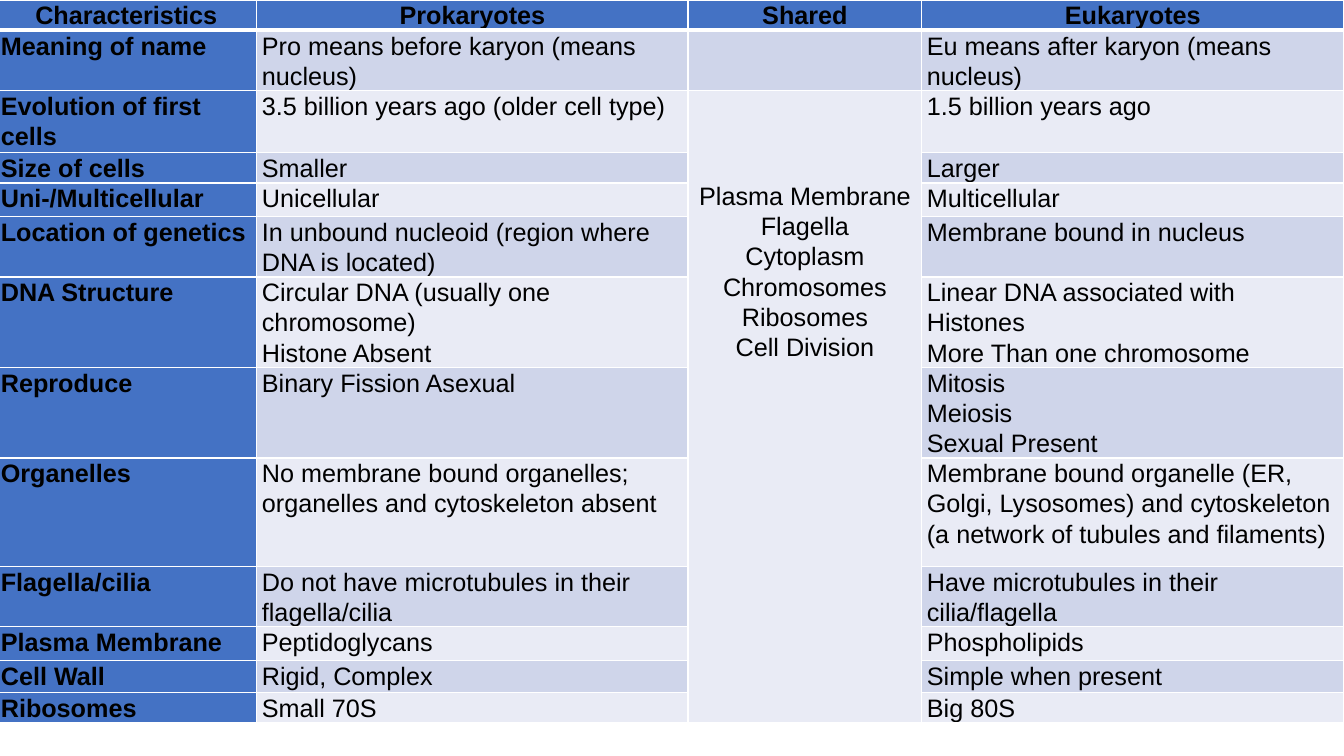
from lxml import etree
from pptx import Presentation
from pptx.dml.color import RGBColor
from pptx.enum.text import PP_ALIGN
from pptx.oxml.ns import qn
from pptx.util import Pt

LEFT, CENTER = PP_ALIGN.LEFT, PP_ALIGN.CENTER
BLUE, DARK_BAND, LIGHT_BAND = "4472C4", "CFD5EA", "E9EBF5"
WHITE, BLACK = "FFFFFF", "000000"

COLUMN_WIDTHS = [186.5, 308, 167, 301.5]
ROW_HEIGHTS = [15, 42, 44.5, 21, 24, 43, 62, 42, 77.5, 42, 24, 23, 21]
SHARED_COLUMN, SHARED_ROW = 2, 2
SHARED_TOP = 64.5  # three lines of text

HEADINGS = ["Characteristics", "Prokaryotes", "Shared", "Eukaryotes"]
SHARED_FEATURES = ("Plasma Membrane\nFlagella\nCytoplasm\n"
                   "Chromosomes\nRibosomes\nCell Division")
# Characteristic, prokaryotes, eukaryotes
COMPARISON = [
    ("Meaning of name", "Pro means before karyon (means nucleus)",
     "Eu means after karyon (means nucleus)"),
    ("Evolution of first cells", "3.5 billion years ago (older cell type)",
     "1.5 billion years ago"),
    ("Size of cells", "Smaller", "Larger"),
    ("Uni-/Multicellular", "Unicellular", "Multicellular"),
    ("Location of genetics",
     "In unbound nucleoid (region where DNA is located)",
     "Membrane bound in nucleus"),
    ("DNA Structure", "Circular DNA (usually one chromosome)\nHistone Absent",
     "Linear DNA associated with Histones\nMore Than one chromosome"),
    ("Reproduce", "Binary Fission Asexual", "Mitosis\nMeiosis\nSexual Present"),
    ("Organelles",
     "No membrane bound organelles; organelles and cytoskeleton absent",
     "Membrane bound organelle (ER, Golgi, Lysosomes) and cytoskeleton "
     "(a network of tubules and filaments)"),
    ("Flagella/cilia", "Do not have microtubules in their flagella/cilia",
     "Have microtubules in their cilia/flagella"),
    ("Plasma Membrane", "Peptidoglycans", "Phospholipids"),
    ("Cell Wall", "Rigid, Complex", "Simple when present"),
    ("Ribosomes", "Small 70S", "Big 80S"),
]


def color(hex_string):
    return RGBColor.from_string(hex_string)


class SlideBuilder:
    font_format = {"name": "Arial", "size": Pt(18)}
    margins = {"margin_left": Pt(3.6), "margin_right": Pt(3.6),
               "margin_top": 0, "margin_bottom": 0}
    line_spacing = 1.07

    def __init__(self, slide):
        self.slide = slide

    def table(self, left, top, column_widths, row_heights):
        table = self.slide.shapes.add_table(
            len(row_heights), len(column_widths), Pt(left), Pt(top),
            Pt(sum(column_widths)), Pt(sum(row_heights))).table
        for column, width in zip(table.columns, column_widths):
            column.width = Pt(width)
        for row, height in zip(table.rows, row_heights):
            row.height = Pt(height)
        return table

    def borders(self, cell, **widths):
        properties = cell._tc.get_or_add_tcPr()
        for side in "LRTB":
            line = etree.SubElement(properties, qn(f"a:ln{side}"),
                                    w=str(Pt(widths.get(side, 1))))
            fill = etree.SubElement(line, qn("a:solidFill"))
            etree.SubElement(fill, qn("a:srgbClr"), val=WHITE)

    def cell(self, cell, text, fill, bold=False, alignment=LEFT, **margins):
        for name, value in {**self.margins, **margins}.items():
            setattr(cell, name, value)
        cell.fill.solid()
        cell.fill.fore_color.rgb = color(fill)
        cell.text = text
        for paragraph in cell.text_frame.paragraphs:
            paragraph.alignment = alignment
            paragraph.line_spacing = self.line_spacing
            for name, value in {**self.font_format, "bold": bold}.items():
                setattr(paragraph.font, name, value)
            paragraph.font.color.rgb = color(BLACK)


def main():
    presentation = Presentation()
    presentation.slide_width, presentation.slide_height = Pt(960), Pt(540)
    blank_layout = presentation.slide_layouts[6]
    builder = SlideBuilder(presentation.slides.add_slide(blank_layout))
    table = builder.table(-3, 0, COLUMN_WIDTHS, ROW_HEIGHTS)

    # White grid, heavier under the header and matched on the row below it
    for row_index, row in enumerate(table.rows):
        for cell in row.cells:
            builder.borders(cell, B=3 if row_index == 0 else 1,
                            T=3 if row_index == 1 else 1)

    # Header row
    for column_index, heading in enumerate(HEADINGS):
        builder.cell(table.cell(0, column_index), heading, BLUE,
                     bold=True, alignment=CENTER)

    # Banded comparison rows
    for row_index, (label, prokaryote, eukaryote) in enumerate(COMPARISON, 1):
        band = DARK_BAND if row_index % 2 else LIGHT_BAND
        builder.cell(table.cell(row_index, 0), label, BLUE, bold=True)
        builder.cell(table.cell(row_index, 1), prokaryote, band)
        builder.cell(table.cell(row_index, 3), eukaryote, band)

    # Shared column: one empty cell above one tall merged cell
    builder.cell(table.cell(1, SHARED_COLUMN), "", DARK_BAND)
    shared_cell = table.cell(SHARED_ROW, SHARED_COLUMN)
    shared_cell.merge(table.cell(len(COMPARISON), SHARED_COLUMN))
    builder.cell(shared_cell, SHARED_FEATURES, LIGHT_BAND,
                 alignment=CENTER, margin_top=Pt(SHARED_TOP))

    presentation.save("out.pptx")


if __name__ == "__main__":
    main()
